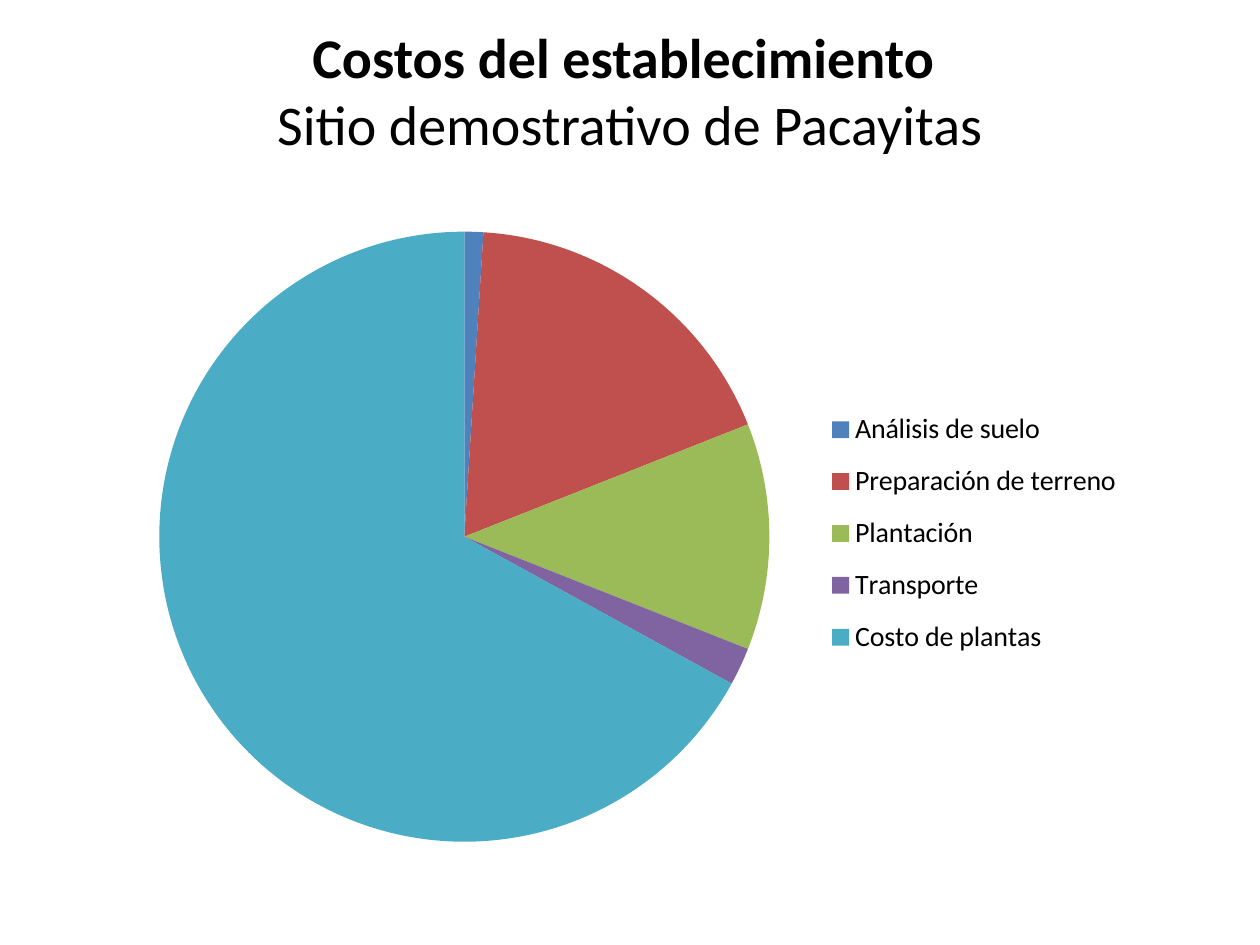
import pptx
import pptx.util
import pptx.dml.color
import pptx.chart.data
import pptx.enum.chart
import pptx.enum.text
import pptx.oxml
import pptx.oxml.ns

Cm = pptx.util.Cm
FONT = "Calibri"
COSTS = {
    "Análisis de suelo": (1, "4F81BD"),
    "Preparación de terreno": (18, "C0504D"),
    "Plantación": (12, "9BBB59"),
    "Transporte": (2, "8064A2"),
    "Costo de plantas": (67, "4BACC6"),
}


def color(hexa):
    return pptx.dml.color.RGBColor.from_string(hexa)


def style(font, size, **more):
    form = {"name": FONT, "size": pptx.util.Pt(size), **more}
    for key, val in form.items():
        setattr(font, key, val)
    font.color.rgb = color("000000")


def place(legend, **box):
    """Set the legend's box as shares of the chart's size."""
    modes = "".join(f'<c:{key}Mode val="edge"/>' for key in "xy")
    sizes = "".join(f'<c:{key} val="{val}"/>' for key, val in box.items())
    node = pptx.oxml.parse_xml(
        f'<c:layout {pptx.oxml.ns.nsdecls("c")}><c:manualLayout>'
        f'{modes}{sizes}</c:manualLayout></c:layout>')
    root = legend._element
    for old in root.findall(pptx.oxml.ns.qn("c:layout")):
        root.remove(old)
    root.find(pptx.oxml.ns.qn("c:legendPos")).addnext(node)


def add_title(slide, left, top, width, height):
    box = slide.shapes.add_textbox(Cm(left), Cm(top), Cm(width), Cm(height))
    frame = box.text_frame
    frame.word_wrap = True
    para = frame.paragraphs[0]
    para.alignment = pptx.enum.text.PP_ALIGN.CENTER
    # Bold heading, then the site name on a second line
    head = para.add_run()
    head.text = "Costos del establecimiento "
    style(head.font, 32, bold=True)
    para.add_line_break()
    site = para.add_run()
    site.text = "Sitio demostrativo de Pacayitas"
    style(site.font, 32, bold=False)


def add_pie(slide, left, top, width, height):
    data = pptx.chart.data.CategoryChartData()
    data.categories = list(COSTS)
    data.add_series("Series 1", [share for share, _ in COSTS.values()])
    chart = slide.shapes.add_chart(
        pptx.enum.chart.XL_CHART_TYPE.PIE,
        Cm(left), Cm(top), Cm(width), Cm(height), data).chart
    chart.has_title = False
    style(chart.font, 10)

    # Slice colours
    plot = chart.plots[0]
    plot.vary_by_categories = True
    for i, (_, hexa) in enumerate(COSTS.values()):
        fill = plot.series[0].points[i].format.fill
        fill.solid()
        fill.fore_color.rgb = color(hexa)

    # Legend on the right, with widely spaced rows
    chart.has_legend = True
    form = {"position": pptx.enum.chart.XL_LEGEND_POSITION.RIGHT,
            "include_in_layout": False}
    for key, val in form.items():
        setattr(chart.legend, key, val)
    style(chart.legend.font, 16)
    place(chart.legend, x=0.69, y=0.28, w=0.28, h=0.43)


def main():
    deck = pptx.Presentation()
    deck.slide_width, deck.slide_height = Cm(25.4), Cm(19.05)
    slide = deck.slides.add_slide(deck.slide_layouts[6])
    add_title(slide, 1.9, 0.33, 21.6, 2)
    add_pie(slide, 1.71, 4.32, 21.6, 13)
    deck.save("out.pptx")


if __name__ == "__main__":
    main()
